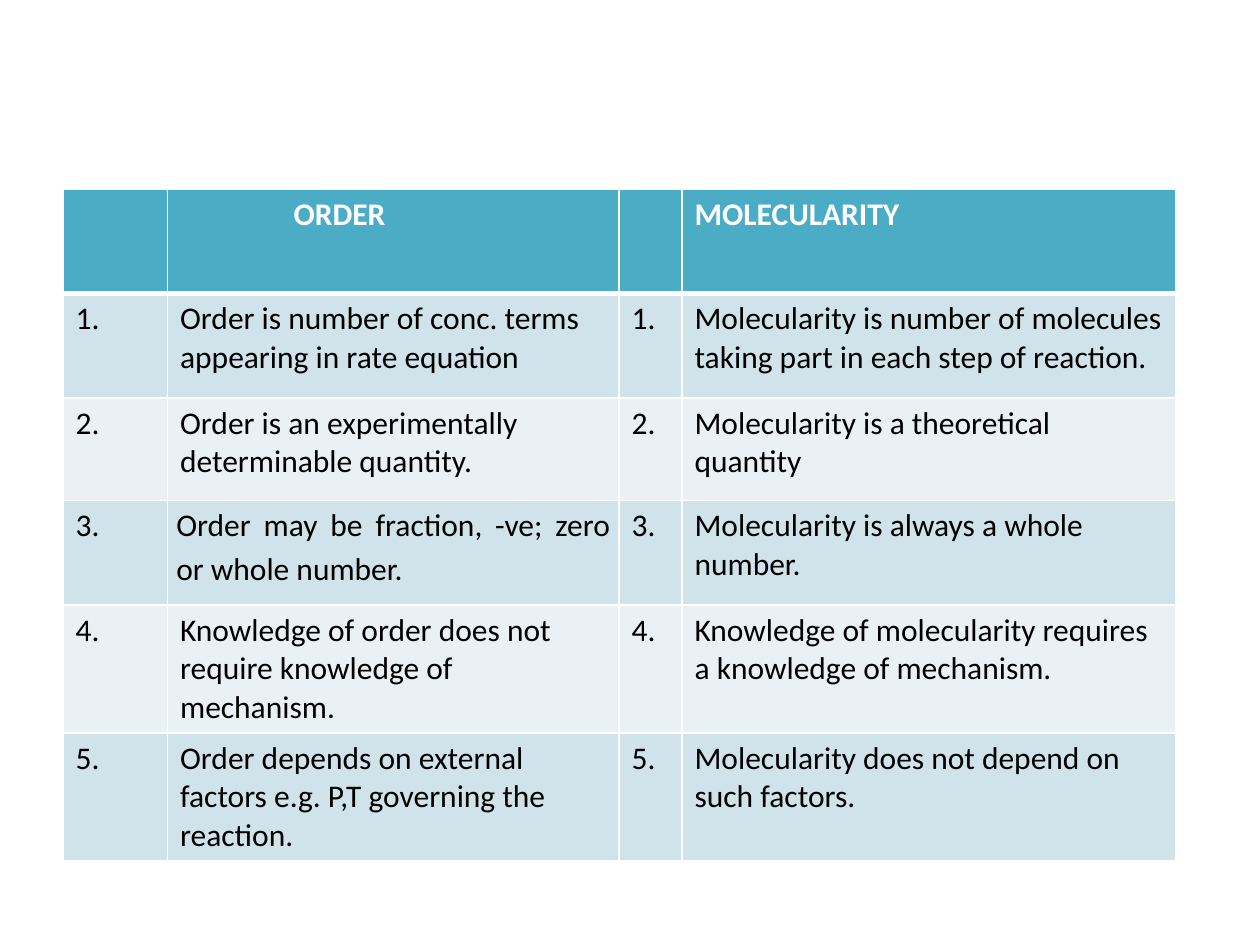
from dataclasses import dataclass

from lxml import etree
from pptx import Presentation
from pptx.dml.color import RGBColor
from pptx.enum.text import PP_ALIGN
from pptx.oxml.ns import qn
from pptx.table import _Cell
from pptx.util import Pt

JUSTIFY = PP_ALIGN.JUSTIFY
BLANK = 6
COLORS = {
    "head": "4BACC6",
    "odd": "D0E3EA",
    "even": "E9F1F5",
    "line": "FFFFFF",
    "light": "FFFFFF",
    "dark": "000000",
}
WIDTHS = (59.75, 258, 36, 282)
HEIGHTS = (59.75, 59.75, 58.5, 59.75, 59.75, 59.75)
LEFT, TOP = 36, 108
THIN, THICK = 1, 3


@dataclass
class Point:
    order: str
    molec: str


POINTS = [
    Point("Order is number of conc. terms appearing in rate equation",
          "Molecularity is number of molecules taking part in each step of reaction."),
    Point("Order is an experimentally determinable quantity.",
          "Molecularity is a theoretical quantity"),
    Point("Order may be fraction, -ve; zero or whole number.",
          "Molecularity is always a whole number."),
    Point("Knowledge of order does not require knowledge of mechanism.",
          "Knowledge of molecularity requires a knowledge of mechanism."),
    Point("Order depends on external factors e.g. P,T governing the reaction.",
          "Molecularity does not depend on such factors."),
]


def set_lines(cell: _Cell, top: float, base: float) -> None:
    """Draw the four borders; the sides are always thin."""
    props = cell._tc.get_or_add_tcPr()
    sides = {"lnL": THIN, "lnR": THIN, "lnT": top, "lnB": base}
    for spot, (side, width) in enumerate(sides.items()):
        line = etree.Element(qn(f"a:{side}"), w=str(Pt(width)))
        fill = etree.SubElement(line, qn("a:solidFill"))
        etree.SubElement(fill, qn("a:srgbClr"), val=COLORS["line"])
        props.insert(spot, line)


def fill_cell(cell: _Cell, text: str, fill: str, ink: str, bold: bool) -> None:
    cell.text = text
    cell.fill.solid()
    cell.fill.fore_color.rgb = RGBColor.from_string(COLORS[fill])
    font = cell.text_frame.paragraphs[0].font
    font.name = "Calibri"
    font.size = Pt(18)
    font.bold = bold
    font.color.rgb = RGBColor.from_string(COLORS[ink])


def main() -> None:
    prs = Presentation()
    prs.slide_width, prs.slide_height = Pt(720), Pt(540)
    slide = prs.slides.add_slide(prs.slide_layouts[BLANK])

    rows = [("", "ORDER", "", "MOLECULARITY")]
    for num, point in enumerate(POINTS, 1):
        rows.append((f"{num}.", point.order, f"{num}.", point.molec))

    frame = slide.shapes.add_table(
        len(rows), len(WIDTHS), Pt(LEFT), Pt(TOP), Pt(sum(WIDTHS)), Pt(sum(HEIGHTS)))
    table = frame.table
    for col, width in zip(table.columns, WIDTHS):
        col.width = Pt(width)
    for row, height in zip(table.rows, HEIGHTS):
        row.height = Pt(height)

    for r, texts in enumerate(rows):
        head = r == 0
        fill = "head" if head else "odd" if r % 2 else "even"
        for c, text in enumerate(texts):
            cell = table.cell(r, c)
            fill_cell(cell, text, fill, "light" if head else "dark", head)
            set_lines(cell, THICK if r == 1 else THIN, THICK if head else THIN)

    table.cell(0, 1).margin_left = Pt(72)

    mixed = table.cell(3, 1)
    mixed.margin_left = mixed.margin_right = Pt(5)
    mixed.margin_top = mixed.margin_bottom = Pt(0)
    para = mixed.text_frame.paragraphs[0]
    para.alignment = JUSTIFY
    para.line_spacing = 1.15

    prs.save("out.pptx")


if __name__ == "__main__":
    main()
